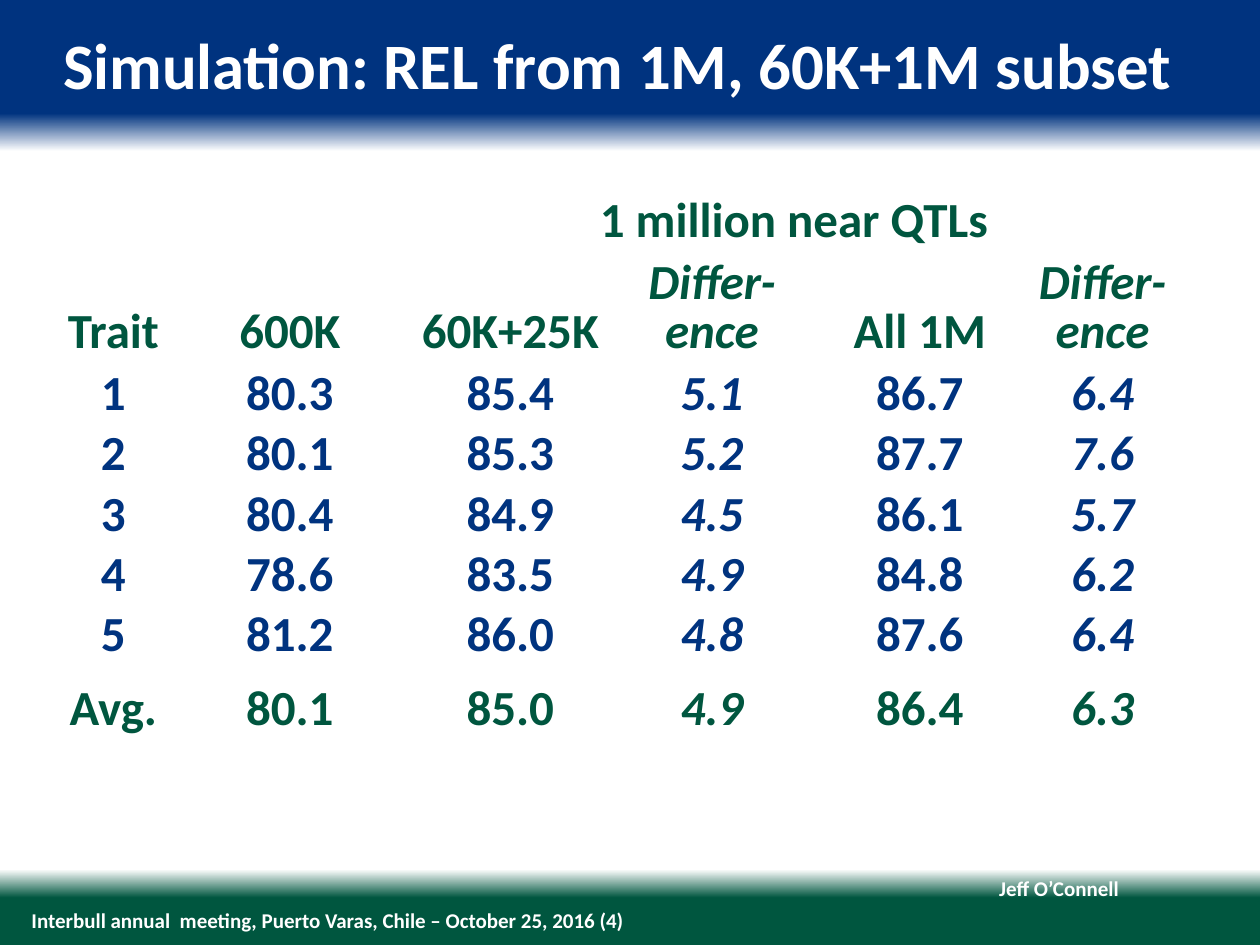
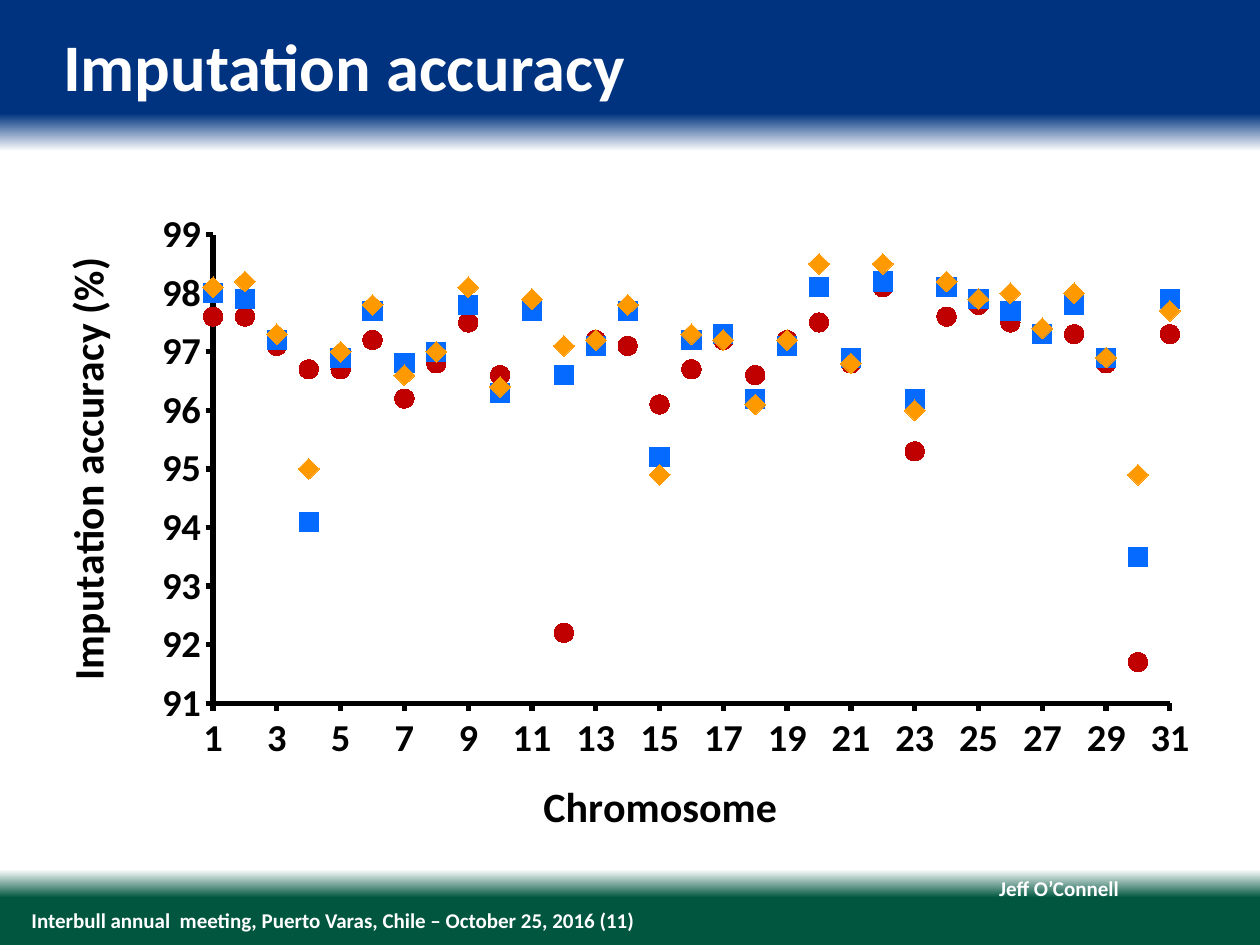
import pptx
import pptx.chart.data
import pptx.dml.color
import pptx.enum.chart
import pptx.enum.text
import pptx.oxml
import pptx.oxml.ns
import pptx.util

NAVY, GREEN, WHITE, BLACK = "00337F", "00563F", "FFFFFF", "000000"
FONT = "Calibri"
ALIGN = pptx.enum.text.PP_ALIGN
ANCHOR = pptx.enum.text.MSO_ANCHOR
CHART = pptx.enum.chart
NAMESPACES = pptx.oxml.ns.nsdecls("a", "c")

deck = pptx.Presentation()
deck.slide_width = pptx.util.Inches(10)
deck.slide_height = pptx.util.Inches(7.5)
STEP = deck.slide_width // 100  # the grid has 100 columns and 75 rows of one step


def colour(hex_string):
    return pptx.dml.color.RGBColor.from_string(hex_string)


def style_font(font, size, hex_string, italic=False):
    font.name, font.size = FONT, pptx.util.Pt(size)
    font.bold, font.italic = True, italic
    font.color.rgb = colour(hex_string)


# Navy band fading out at the top, green band fading in at the bottom
master = deck.slide_master
fill = master.background.fill
fill.gradient()
fill.gradient_angle = 270
stops = master.element.find(".//" + pptx.oxml.ns.qn("a:gsLst"))
for stop in list(stops):
    stops.remove(stop)
for percent, shade in ((0, NAVY), (12, NAVY), (16, WHITE), (92, WHITE), (95, GREEN), (100, GREEN)):
    stops.append(pptx.oxml.parse_xml(
        f'<a:gs {NAMESPACES} pos="{percent * 1000}"><a:srgbClr val="{shade}"/></a:gs>'))

# Titles and footers
pages = []
for title_text, title_size, number in (
        ("Simulation: REL from 1M, 60K+1M subset", 37, 4),
        ("Imputation accuracy", 38, 11)):
    page = deck.slides.add_slide(deck.slide_layouts[5])
    pages.append(page)
    title = page.shapes.title
    title.left, title.top, title.width, title.height = 5 * STEP, 2 * STEP, 90 * STEP, int(6.3 * STEP)
    title.text_frame.text = title_text
    author = page.shapes.add_textbox(int(79.1 * STEP), int(69.5 * STEP), int(9.7 * STEP), 2 * STEP)
    author.text_frame.text = "Jeff O’Connell"
    meeting = page.shapes.add_textbox(int(2.5 * STEP), 72 * STEP, int(59.3 * STEP), 2 * STEP)
    meeting.text_frame.text = f"Interbull annual  meeting, Puerto Varas, Chile – October 25, 2016 ({number})"
    for box, size, anchor, align, wrap in (
            (title, title_size, ANCHOR.TOP, ALIGN.LEFT, True),
            (author, 12, ANCHOR.MIDDLE, ALIGN.RIGHT, False),
            (meeting, 12, ANCHOR.MIDDLE, ALIGN.LEFT, True)):
        frame = box.text_frame
        frame.margin_left = frame.margin_top = frame.margin_right = frame.margin_bottom = 0
        frame.vertical_anchor, frame.word_wrap = anchor, wrap
        frame.auto_size = pptx.enum.text.MSO_AUTO_SIZE.NONE
        frame.paragraphs[0].alignment = align
        style_font(frame.paragraphs[0].font, size, WHITE)
table_page, chart_page = pages

# Reliability table: narrow empty columns separate the groups
column_widths = (8, 20, 15, 3, 11, 5, 12, 3, 11)
row_heights = (3.9, 8.8, 5, 4.8, 4.8, 4.8, 4.8, 6)
top_insets = (0, 1, 0.5, 0, 0, 0, 0, 1)
value_columns = (0, 1, 2, 4, 6, 8)
difference_columns = (4, 8)
header_rows = 2
reliabilities = (
    ("Trait", "600K", "1 million near QTLs"),
    ("", "", "60K+25K", "Differ-ence", "All 1M", "Differ-ence"),
    ("1", "80.3", "85.4", "5.1", "86.7", "6.4"),
    ("2", "80.1", "85.3", "5.2", "87.7", "7.6"),
    ("3", "80.4", "84.9", "4.5", "86.1", "5.7"),
    ("4", "78.6", "83.5", "4.9", "84.8", "6.2"),
    ("5", "81.2", "86.0", "4.8", "87.6", "6.4"),
    ("Avg.", "80.1", "85.0", "4.9", "86.4", "6.3"))

table = table_page.shapes.add_table(
    len(row_heights), len(column_widths), 5 * STEP, 16 * STEP,
    sum(column_widths) * STEP, int(sum(row_heights) * STEP)).table
table.first_row = table.horz_banding = False
for column, width in zip(table.columns, column_widths):
    column.width = width * STEP
for row, height in zip(table.rows, row_heights):
    row.height = int(height * STEP)
for row_index, texts in enumerate(reliabilities):
    is_header = row_index < header_rows
    is_average = row_index == len(reliabilities) - 1
    for column_index, text in zip(value_columns, texts):
        table.cell(row_index, column_index).text = text
    for column_index in range(len(column_widths)):
        cell = table.cell(row_index, column_index)
        cell.fill.background()
        cell.margin_left = cell.margin_right = cell.margin_bottom = 0
        in_merged_header = is_header and column_index < 2
        cell.margin_top = 0 if in_merged_header else int(top_insets[row_index] * STEP)
        cell.vertical_anchor = ANCHOR.BOTTOM if in_merged_header or row_index == 1 else ANCHOR.TOP
        para = cell.text_frame.paragraphs[0]
        para.alignment = ALIGN.CENTER
        para.line_spacing = pptx.util.Pt(28 if is_header else 32)
        style_font(para.font, 28, GREEN if is_header or is_average else NAVY,
                   row_index > 0 and column_index in difference_columns)
for first, last in (((0, 0), (1, 0)), ((0, 1), (1, 1)), ((0, 2), (0, 8))):
    table.cell(*first).merge(table.cell(*last))

# Imputation accuracy by chromosome
MARKER = CHART.XL_MARKER_STYLE
accuracies = (
    ("FF9900", MARKER.DIAMOND, 12,
     (98.1, 98.2, 97.3, 95, 97, 97.8, 96.6, 97, 98.1, 96.4, 97.9, 97.1, 97.2, 97.8, 94.9, 97.3,
      97.2, 96.1, 97.2, 98.5, 96.8, 98.5, 96, 98.2, 97.9, 98, 97.4, 98, 96.9, 94.9, 97.7)),
    ("056AFF", MARKER.SQUARE, 11,
     (98, 97.9, 97.2, 94.1, 96.9, 97.7, 96.8, 97, 97.8, 96.3, 97.7, 96.6, 97.1, 97.7, 95.2, 97.2,
      97.3, 96.2, 97.1, 98.1, 96.9, 98.2, 96.2, 98.1, 97.9, 97.7, 97.3, 97.8, 96.9, 93.5, 97.9)),
    ("C00000", MARKER.CIRCLE, 11,
     (97.6, 97.6, 97.1, 96.7, 96.7, 97.2, 96.2, 96.8, 97.5, 96.6, 97.8, 92.2, 97.2, 97.1, 96.1, 96.7,
      97.2, 96.6, 97.2, 97.5, 96.8, 98.1, 95.3, 97.6, 97.8, 97.5, 97.3, 97.3, 96.8, 91.7, 97.3)))

chart_data = pptx.chart.data.XyChartData()
for _, _, _, values in accuracies:
    points = chart_data.add_series("")
    for chromosome, accuracy in enumerate(values, 1):
        points.add_data_point(chromosome, accuracy)
chart = chart_page.shapes.add_chart(
    CHART.XL_CHART_TYPE.XY_SCATTER, int(4.1 * STEP), int(12.7 * STEP),
    int(91.5 * STEP), int(54.5 * STEP), chart_data).chart
chart.has_title = chart.has_legend = False
style_font(chart.font, 24, BLACK)
chart.plots[0].vary_by_categories = False

for series, (shade, marker_style, marker_size, _) in zip(chart.plots[0].series, accuracies):
    series.smooth = False
    series.format.line.fill.background()
    series.marker.style, series.marker.size = marker_style, marker_size
    series.marker.format.fill.solid()
    series.marker.format.fill.fore_color.rgb = colour(shade)
    series.marker.format.line.fill.background()

for axis, axis_text, low, high, unit in (
        (chart.category_axis, "Chromosome", 1, 31, 2),
        (chart.value_axis, "Imputation accuracy (%)", 91, 99, 1)):
    axis.minimum_scale, axis.maximum_scale, axis.major_unit = low, high, unit
    axis.has_major_gridlines = False
    axis.major_tick_mark = CHART.XL_TICK_MARK.OUTSIDE
    axis.minor_tick_mark = CHART.XL_TICK_MARK.NONE
    axis.crosses = CHART.XL_AXIS_CROSSES.MINIMUM
    axis.format.line.color.rgb = colour(BLACK)
    axis.format.line.width = pptx.util.Pt(3)
    style_font(axis.tick_labels.font, 22, BLACK)
    axis.axis_title.text_frame.text = axis_text
    style_font(axis.axis_title.text_frame.paragraphs[0].font, 24, BLACK)

# Place the plot and the axis titles as shares of the chart
plot_area = chart.element.xpath(".//c:plotArea")[0]
chromosome_title, accuracy_title = chart.element.xpath(".//c:valAx/c:title")
turned = accuracy_title.xpath(".//a:bodyPr")[0]
turned.set("rot", "-5400000")
turned.set("vert", "horz")
for part, index, target, shares in (
        (plot_area, 0, '<c:layoutTarget val="inner"/>', {"x": 0.14, "y": 0.11, "w": 0.83, "h": 0.69}),
        (chromosome_title, 1, "", {"x": 0.42, "y": 0.9}),
        (accuracy_title, 1, "", {"x": 0, "y": 0.14})):
    for old_layout in part.xpath("./c:layout"):
        part.remove(old_layout)
    modes = "".join(f'<c:{side}Mode val="edge"/>' for side in "xy")
    lengths = "".join(f'<c:{side} val="{share}"/>' for side, share in shares.items())
    part.insert(index, pptx.oxml.parse_xml(
        f"<c:layout {NAMESPACES}><c:manualLayout>{target}{modes}{lengths}</c:manualLayout></c:layout>"))

deck.save("out.pptx")
